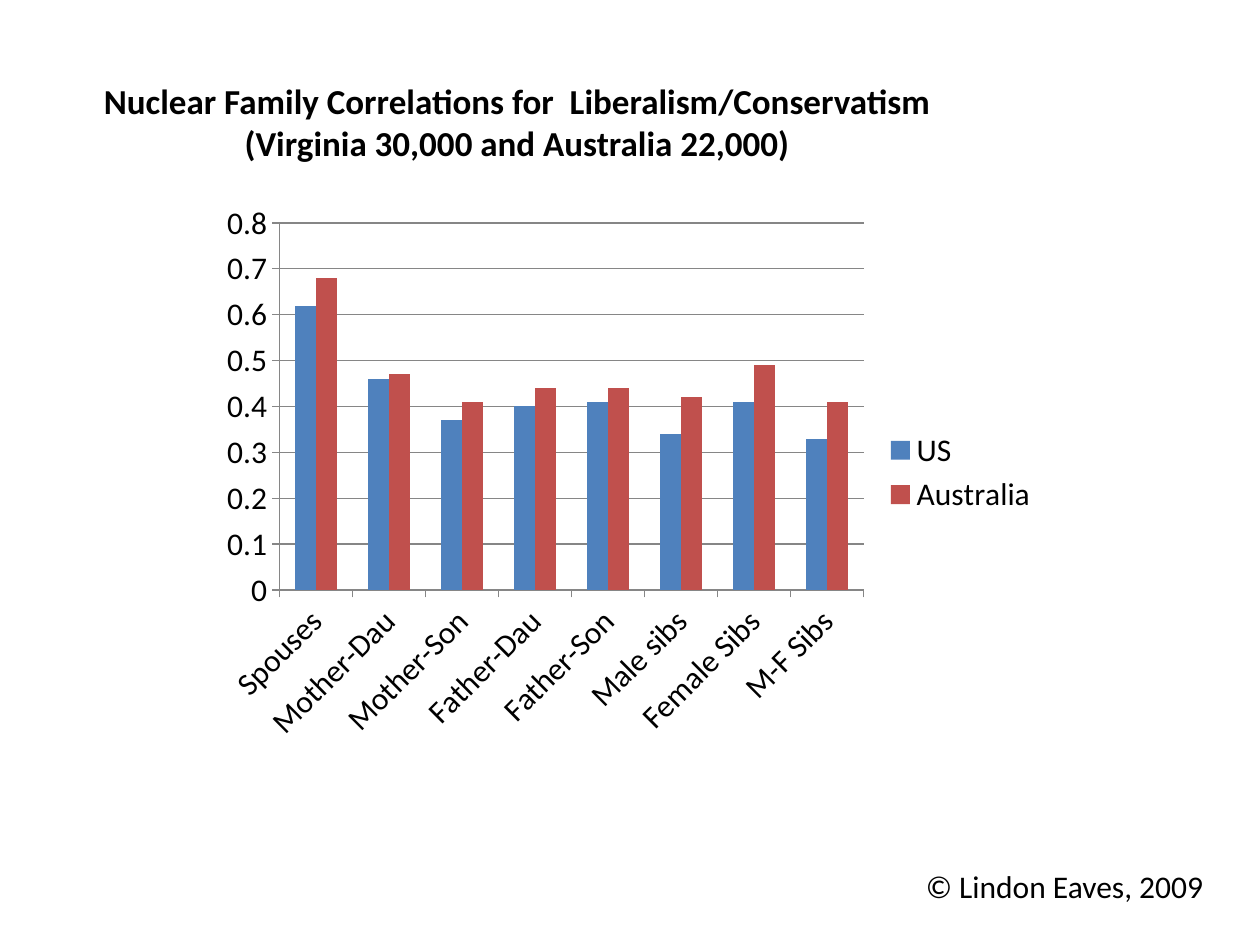
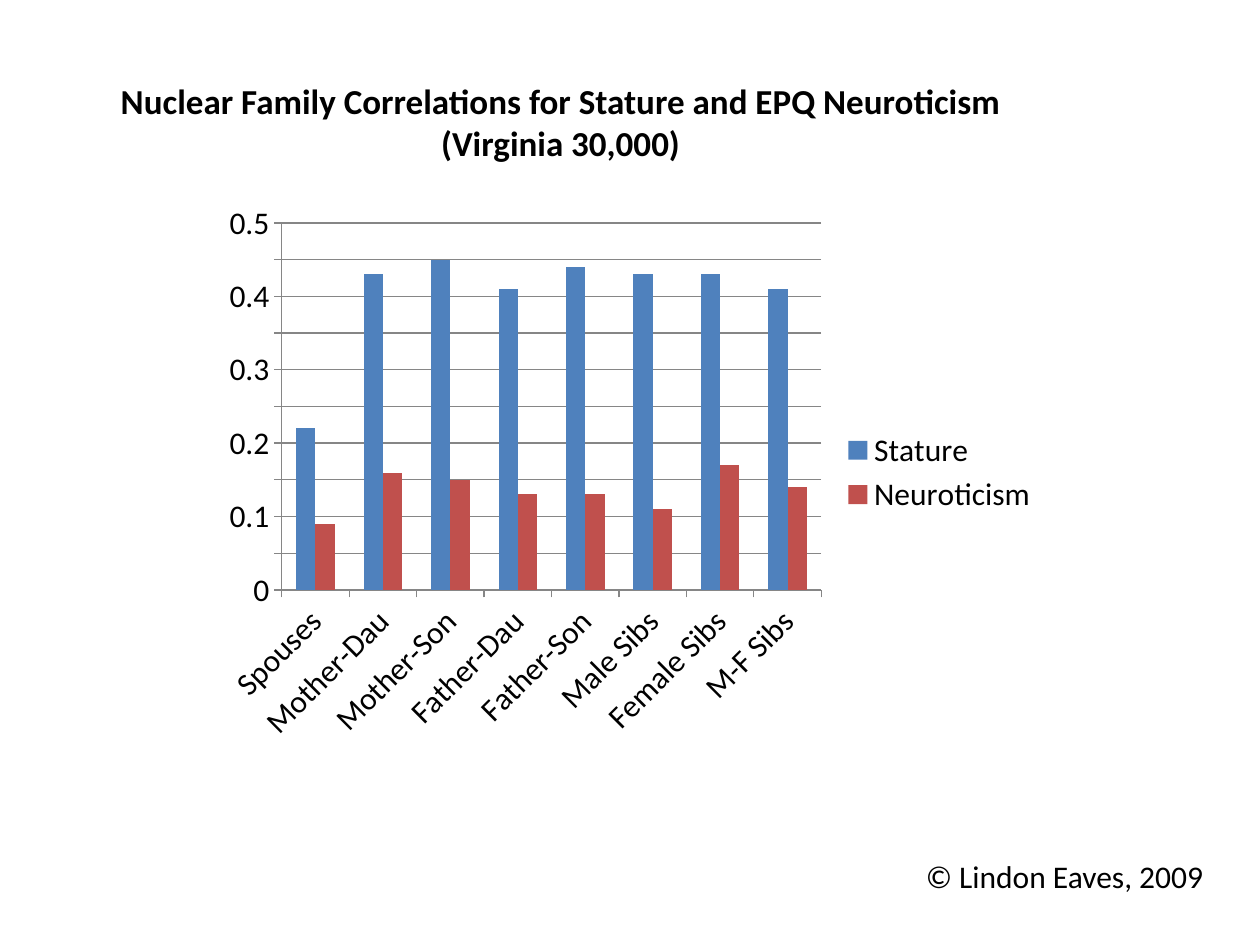
from dataclasses import dataclass

from pptx import Presentation
from pptx.chart.data import CategoryChartData
from pptx.dml.color import RGBColor
from pptx.enum.chart import XL_CHART_TYPE, XL_LEGEND_POSITION, XL_TICK_MARK
from pptx.enum.text import MSO_ANCHOR, MSO_AUTO_SIZE, PP_ALIGN
from pptx.util import Inches, Pt

CLUSTERED = XL_CHART_TYPE.COLUMN_CLUSTERED
LEGEND_RIGHT = XL_LEGEND_POSITION.RIGHT
TICK_OUTSIDE = XL_TICK_MARK.OUTSIDE
ANCHOR_TOP = MSO_ANCHOR.TOP
FIT_SHAPE = MSO_AUTO_SIZE.SHAPE_TO_FIT_TEXT
LEFT, CENTER = PP_ALIGN.LEFT, PP_ALIGN.CENTER
TITLE_ONLY_LAYOUT = 5


@dataclass(frozen=True)
class Theme:
    font: str = "Calibri"
    text: RGBColor = RGBColor(0x00, 0x00, 0x00)
    grid: RGBColor = RGBColor(0x86, 0x86, 0x86)
    series: tuple = (RGBColor(0x4F, 0x81, 0xBD), RGBColor(0xC0, 0x50, 0x4D))
    title_size: int = 20
    body_size: int = 18


THEME = Theme()
CHART_BOX = (1.67, 1.53, 6.67, 4.44)
COPYRIGHT = "© Lindon Eaves, 2009"

SLIDES = [
    {
        "title": ["Nuclear Family Correlations for  Liberalism/Conservatism",
                  "(Virginia 30,000 and Australia 22,000)"],
        "title_box": (0.58, 0.58, 7.05, 0.77),
        "footer_box": (7.25, 6.83, 2.43, 0.4),
        "male_siblings": "Male sibs",
        "series": {"US": (0.62, 0.46, 0.37, 0.4, 0.41, 0.34, 0.41, 0.33),
                   "Australia": (0.68, 0.47, 0.41, 0.44, 0.44, 0.42, 0.49, 0.41)},
        "axis_maximum": 0.8,
        "axis_step": 0.1,
    },
    {
        "title": ["Nuclear Family Correlations for Stature and EPQ Neuroticism",
                  "(Virginia 30,000)"],
        "title_box": (0.83, 0.58, 7.24, 0.77),
        "footer_box": (7.25, 6.75, 2.43, 0.4),
        "male_siblings": "Male Sibs",
        "series": {"Stature": (0.22, 0.43, 0.45, 0.41, 0.44, 0.43, 0.43, 0.41),
                   "Neuroticism": (0.09, 0.16, 0.15, 0.13, 0.13, 0.11, 0.17, 0.14)},
        "axis_maximum": 0.5,
        "axis_step": 0.05,
    },
]


def to_lengths(box):
    return [Inches(value) for value in box]


def format_font(font, size, bold=False):
    font.name = THEME.font
    font.size = Pt(size)
    font.bold = bold
    font.color.rgb = THEME.text


def write_text(shape, lines, size=THEME.body_size, bold=False, align=LEFT):
    frame = shape.text_frame
    frame.word_wrap = False
    frame.auto_size = FIT_SHAPE
    frame.vertical_anchor = ANCHOR_TOP
    for index, line in enumerate(lines):
        paragraph = frame.paragraphs[0] if index == 0 else frame.add_paragraph()
        paragraph.alignment = align
        run = paragraph.add_run()
        run.text = line
        format_font(run.font, size, bold)


def add_title(slide, lines, box):
    title = slide.shapes.title
    title.left, title.top, title.width, title.height = to_lengths(box)
    write_text(title, lines, size=THEME.title_size, bold=True, align=CENTER)


def add_footer(slide, box):
    write_text(slide.shapes.add_textbox(*to_lengths(box)), [COPYRIGHT])


def format_axis(axis):
    axis.major_tick_mark = TICK_OUTSIDE
    axis.format.line.color.rgb = THEME.grid
    format_font(axis.tick_labels.font, THEME.body_size)


def add_correlation_chart(slide, box, content):
    data = CategoryChartData()
    data.categories = ["Spouses", "Mother-Dau", "Mother-Son", "Father-Dau",
                       "Father-Son", content["male_siblings"], "Female Sibs",
                       "M-F Sibs"]
    for name, values in content["series"].items():
        data.add_series(name, values)
    chart = slide.shapes.add_chart(CLUSTERED, *to_lengths(box), data).chart
    chart.has_title = False
    format_font(chart.font, THEME.body_size)

    # Columns
    plot = chart.plots[0]
    plot.gap_width = 150
    plot.overlap = 0
    plot.vary_by_categories = False
    for series, color in zip(plot.series, THEME.series):
        series.format.fill.solid()
        series.format.fill.fore_color.rgb = color

    # Axes, with slanted category names
    format_axis(chart.category_axis)
    label_body = chart.category_axis.tick_labels.font._element.getparent().getparent().getparent()
    label_body.bodyPr.set("rot", "-2700000")
    value_axis = chart.value_axis
    format_axis(value_axis)
    value_axis.minimum_scale = 0
    value_axis.maximum_scale = content["axis_maximum"]
    value_axis.major_unit = content["axis_step"]
    value_axis.has_major_gridlines = True
    value_axis.major_gridlines.format.line.color.rgb = THEME.grid

    # Legend
    chart.has_legend = True
    chart.legend.position = LEGEND_RIGHT
    chart.legend.include_in_layout = False
    format_font(chart.legend.font, THEME.body_size)


def add_chart_slide(presentation, content):
    slide = presentation.slides.add_slide(presentation.slide_layouts[TITLE_ONLY_LAYOUT])
    add_correlation_chart(slide, CHART_BOX, content)
    add_title(slide, content["title"], content["title_box"])
    add_footer(slide, content["footer_box"])


def main():
    presentation = Presentation()
    presentation.slide_width = Inches(10)
    presentation.slide_height = Inches(7.5)
    for content in SLIDES:
        add_chart_slide(presentation, content)
    presentation.save("out.pptx")


if __name__ == "__main__":
    main()
